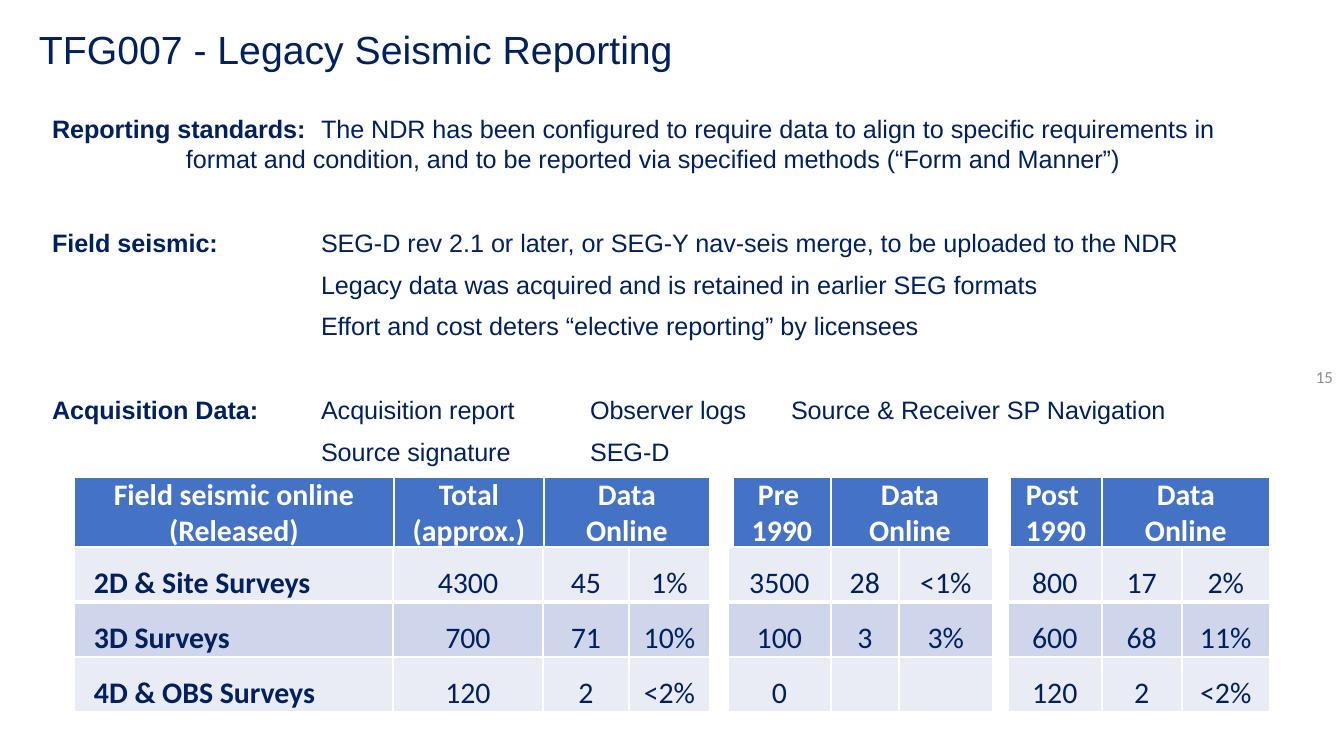
from dataclasses import dataclass

from lxml import etree
from pptx import Presentation
from pptx.dml.color import RGBColor
from pptx.enum.text import MSO_ANCHOR, PP_ALIGN
from pptx.oxml.ns import qn
from pptx.util import Emu, Pt

CENTER, LEFT, RIGHT = PP_ALIGN.CENTER, PP_ALIGN.LEFT, PP_ALIGN.RIGHT
TOP, MIDDLE, BOTTOM = MSO_ANCHOR.TOP, MSO_ANCHOR.MIDDLE, MSO_ANCHOR.BOTTOM
SLIDE_W, SLIDE_H = 1344, 756
EMU_PER_PX = 9144000 / SLIDE_W


@dataclass(frozen=True)
class Theme:
    navy: str = "002060"
    white: str = "FFFFFF"
    grey: str = "8C8C8C"
    header: str = "4472C4"
    band_light: str = "E9EBF5"
    band_dark: str = "CFD5EA"
    text_font: str = "Arial"
    table_font: str = "Calibri"
    title_size: float = 21
    body_size: float = 13.5
    table_size: float = 16
    number_size: float = 9
    line_gap: float = 6
    section_gap: float = 29


THEME = Theme()
TAB_STOPS = (134, 269, 538, 739)

# (starts a section, label, text)
BODY = [
    (True, "Reporting standards:",
     "\tThe NDR has been configured to require data to align to specific requirements in"
     "\v\tformat and condition, and to be reported via specified methods (“Form and Manner”)"),
    (True, "Field seismic:",
     "\tSEG-D rev 2.1 or later, or SEG-Y nav-seis merge, to be uploaded to the NDR"),
    (False, "", "\t\tLegacy data was acquired and is retained in earlier SEG formats"),
    (False, "", "\t\tEffort and cost deters “elective reporting” by licensees"),
    (True, "Acquisition Data:",
     "\tAcquisition report\tObserver logs\tSource & Receiver SP Navigation"),
    (False, "", "\t\tSource signature\tSEG-D"),
]

# None marks a gap between column groups
HEADER_WIDTHS = (320, 150, 166, 23, 98, 158, 21, 92, 168)
HEADER_ROWS = [
    ("Field seismic online (Released)", "Total\n(approx.)", "Data\nOnline", None,
     "Pre \n1990", "Data\nOnline", None, "Post \n1990", "Data\nOnline"),
]
SURVEY_WIDTHS = (319, 150, 86, 81, 18, 103, 68, 94, 15, 94, 80, 88)
SURVEY_ROWS = [
    ("2D & Site Surveys", "4300", "45", "1%", None, "3500", "28", "<1%", None, "800", "17", "2%"),
    ("3D Surveys", "700", "71", "10%", None, "100", "3", "3%", None, "600", "68", "11%"),
    ("4D & OBS Surveys", "120", "2", "<2%", None, "0", "", "", None, "120", "2", "<2%"),
]


def px(n):
    return Emu(round(n * EMU_PER_PX))


def style(font, name, size, color, bold=False):
    font.name, font.size, font.bold = name, Pt(size), bold
    font.color.rgb = RGBColor.from_string(color)


def add_text_frame(slide, box, anchor, insets):
    s = slide.shapes.add_textbox(*map(px, box))
    tf = s.text_frame
    tf.word_wrap = True
    tf.vertical_anchor = anchor
    tf.margin_left, tf.margin_top, tf.margin_right, tf.margin_bottom = map(px, insets)
    return tf


def add_line(slide, text, box, insets, font, size, color, align):
    tf = add_text_frame(slide, box, MIDDLE, insets)
    tf.text = text
    p = tf.paragraphs[0]
    p.alignment = align
    p.line_spacing = 0.9
    style(p.runs[0].font, font, size, color)


def add_tab_stops(p):
    tabs = etree.SubElement(p._p.get_or_add_pPr(), qn("a:tabLst"))
    for stop in TAB_STOPS:
        etree.SubElement(tabs, qn("a:tab"), pos=str(px(stop)), algn="l")


def add_body(slide, box):
    tf = add_text_frame(slide, box, TOP, (13, 7, 13, 7))
    for i, (new_section, label, text) in enumerate(BODY):
        p = tf.paragraphs[0] if i == 0 else tf.add_paragraph()
        p.text = label + text if not label else text
        add_tab_stops(p)
        if i:
            p.space_before = Pt(THEME.section_gap if new_section else THEME.line_gap)
        for r in p.runs:
            style(r.font, THEME.text_font, THEME.body_size, THEME.navy)
        if label:
            r = p.add_run()
            r.text = label
            style(r.font, THEME.text_font, THEME.body_size, THEME.navy, True)
            p.runs[0]._r.addprevious(r._r)


def set_borders(cell, bottom):
    tc_pr = cell._tc.get_or_add_tcPr()
    for side, width in (("L", 1), ("R", 1), ("T", 1), ("B", bottom)):
        ln = etree.SubElement(tc_pr, qn(f"a:ln{side}"), w=str(Pt(width)))
        fill = etree.SubElement(ln, qn("a:solidFill"))
        etree.SubElement(fill, qn("a:srgbClr"), val=THEME.white)


def fill_cell(cell, text, fill, color, bold, align, bottom):
    cell.margin_left = px(20 if align == LEFT else 0)
    cell.margin_right = cell.margin_top = cell.margin_bottom = 0
    cell.vertical_anchor = BOTTOM
    set_borders(cell, bottom)
    cell.fill.solid()
    cell.fill.fore_color.rgb = RGBColor.from_string(THEME.white if text is None else fill)
    cell.text_frame.text = text or ""
    for p in cell.text_frame.paragraphs:
        p.alignment = align
        style(p.font, THEME.table_font, THEME.table_size, color, bold)
        for r in p.runs:
            style(r.font, THEME.table_font, THEME.table_size, color, bold)


def add_grid(slide, left, top, widths, row_height, rows, fills, is_header):
    """Add a table; a thick rule runs under its first row."""
    frame = slide.shapes.add_table(len(rows), len(widths), px(left), px(top),
                                   px(sum(widths)), px(row_height * len(rows)))
    table = frame.table
    table.first_row = table.horz_banding = False
    for column, width in zip(table.columns, widths):
        column.width = px(width)
    color = THEME.white if is_header else THEME.navy
    for i, values in enumerate(rows):
        table.rows[i].height = px(row_height)
        for j, text in enumerate(values):
            row_label = j == 0 and not is_header
            fill_cell(table.cell(i, j), text, fills[i], color, is_header or row_label,
                      LEFT if row_label else CENTER, 3 if i == 0 else 1)


def main():
    prs = Presentation()
    prs.slide_width, prs.slide_height = px(SLIDE_W), px(SLIDE_H)
    slide = prs.slides.add_slide(prs.slide_layouts[6])
    add_line(slide, "15", (1251, 354, 91, 48), (9, 5, 9, 5),
             THEME.table_font, THEME.number_size, THEME.grey, RIGHT)
    add_line(slide, "TFG007 - Legacy Seismic Reporting", (39, 28, 891, 55), (0, 0, 13, 7),
             THEME.text_font, THEME.title_size, THEME.navy, LEFT)
    add_body(slide, (39, 106, 1265, 439))
    add_grid(slide, 74, 477, HEADER_WIDTHS, 70, HEADER_ROWS, (THEME.header,), True)
    add_grid(slide, 74, 547, SURVEY_WIDTHS, 55, SURVEY_ROWS,
             (THEME.band_light, THEME.band_dark, THEME.band_light), False)
    prs.save("out.pptx")


if __name__ == "__main__":
    main()
